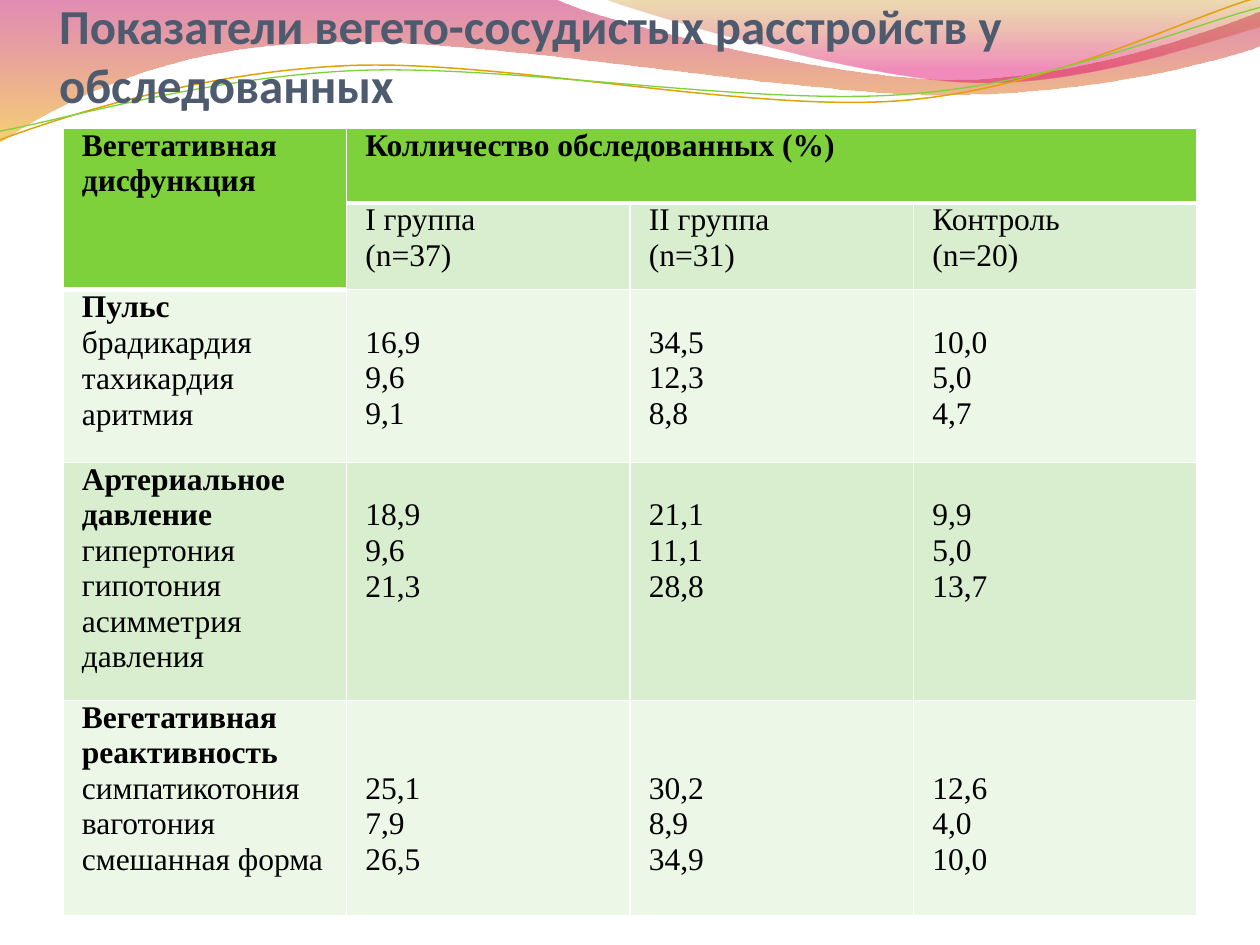
import math

import pptx
import pptx.dml.color
import pptx.enum.text
import pptx.oxml
import pptx.oxml.ns
import pptx.util

Inches = pptx.util.Inches
Pt = pptx.util.Pt
RGBColor = pptx.dml.color.RGBColor
qn = pptx.oxml.ns.qn

COLORS = {
    "title": "4E5B6F", "text": "000000", "border": "FFFFFF",
    "header": "7FD13B", "band": "D8EECE", "light": "ECF7E8",
    "crimson": "BD0059", "amber": "F0AB00", "ochre": "C38B00",
    "pink": "E1006B", "gold line": "E0A209", "green line": "7FD13B",
}
NAMESPACE = pptx.oxml.ns.nsdecls("a")

presentation = pptx.Presentation()
presentation.slide_width = Inches(10)
presentation.slide_height = Inches(7.5)
slide = presentation.slides.add_slide(presentation.slide_layouts[6])


def add_curve(segments, closed):
    """Draw an outline from points (x, y) and cubic segments of three points."""
    points = [(Inches(x), Inches(y)) for segment in segments
              for x, y in zip(segment[::2], segment[1::2])]
    builder = slide.shapes.build_freeform(*points[0], scale=1.0)
    builder.add_line_segments(points[1:], close=closed)
    shape = builder.convert_to_shape()
    shape.shadow.inherit = False
    straight_parts = iter(list(shape._element.iter(qn("a:lnTo"))))
    for segment in segments[1:]:
        first = next(straight_parts)
        if len(segment) == 6:
            first.tag = qn("a:cubicBezTo")
            for _ in range(2):
                control = next(straight_parts)
                first.append(control[0])
                control.getparent().remove(control)
    return shape


def write_paragraph(paragraph, text, formats):
    run = paragraph.add_run()
    run.text = text
    for name, value in formats.items():
        setattr(run.font, name, value)
    return run


# Waves: outline, then gradient stops as (position, colour, opacity in percent)
waves = [
    ([(0, 0), (4.4, -0.01), (4.76, 0.17, 6.64, 0.63, 7.58, 0.63),
      (8.53, 0.63, 9.58, 0.26, 10, 0.09), (10.01, 0.36),
      (9.83, 0.44, 8.7, 0.76, 7.46, 0.75), (6.22, 0.75, 3.82, 0.28, 2.57, 0.34),
      (1.29, 0.36, 0.46, 0.83, -0.01, 1.13), (0, 0)],
     [(0, "crimson", 45), (1, "amber", 55)]),
    ([(4.79, -0.01), (5.09, 0.11, 6.82, 0.62, 7.69, 0.65),
      (8.56, 0.69, 9.61, 0.32, 10, 0.21), (10, 0), (4.79, -0.01)],
     [(0, "ochre", 30), (0.8, "pink", 45)]),
]
for outline, stops in waves:
    shape = add_curve(outline, True)
    shape.line.fill.background()
    shape.fill.gradient()
    shape.fill.gradient_angle = 270
    for stop, (position, color, opacity) in zip(shape.fill.gradient_stops, stops):
        stop.position = position
        stop.color.rgb = RGBColor.from_string(COLORS[color])
        color_element = stop._gs.find(qn("a:srgbClr"))
        color_element.append(pptx.oxml.parse_xml(
            f'<a:alpha {NAMESPACE} val="{opacity * 1000}"/>'))

# Thin lines are laid out level about their centre, then tilted as shapes
tilt = 2.7
cosine, sine = math.cos(math.radians(tilt)), math.sin(math.radians(tilt))
wave_lines = [
    ([(0, 1.11), (0.48, 0.93, 1.58, 0.57, 2.77, 0.52),
      (3.95, 0.47, 5.93, 0.89, 7.13, 0.8), (8.33, 0.71, 9.38, 0.15, 9.98, -0.02)],
     (4.99, 0.58), "gold line", 0.85),
    ([(0, 1.04), (0.47, 0.96, 1.64, 0.61, 2.83, 0.56),
      (4.03, 0.51, 5.97, 0.84, 7.17, 0.75), (8.36, 0.67, 9.41, 0.21, 10, 0.06)],
     (5, 0.59), "green line", 0.75),
]
for outline, (center_x, center_y), color, width in wave_lines:
    level_outline = []
    for segment in outline:
        level_segment = []
        for x, y in zip(segment[::2], segment[1::2]):
            dx, dy = x - center_x, y - center_y
            level_segment += [center_x + dx * cosine - dy * sine,
                              center_y + dx * sine + dy * cosine]
        level_outline.append(level_segment)
    shape = add_curve(level_outline, False)
    shape.rotation = 360 - tilt
    shape.fill.background()
    shape.line.color.rgb = RGBColor.from_string(COLORS[color])
    shape.line.width = Pt(width)

# Title
title = slide.shapes.add_textbox(Inches(0.47), Inches(-0.16), Inches(9), Inches(1.8))
title_frame_formats = {
    "word_wrap": True, "vertical_anchor": pptx.enum.text.MSO_ANCHOR.BOTTOM,
    "margin_left": 0, "margin_right": 0, "margin_top": 0, "margin_bottom": Inches(0.74),
}
for name, value in title_frame_formats.items():
    setattr(title.text_frame, name, value)
title_run = write_paragraph(
    title.text_frame.paragraphs[0],
    "Показатели вегето-сосудистых расстройств у обследованных",
    {"name": "Calibri", "size": Pt(27.9), "bold": True})
title_run.font.color.rgb = RGBColor.from_string(COLORS["title"])

# Table: each cell is a list of lines
rows = [
    [["Вегетативная дисфункция"], ["Колличество обследованных (%)"], [], []],
    [[], ["І группа", "(n=37)"], ["ІІ группа", "(n=31)"], ["Контроль", "(n=20)"]],
    [["Пульс", "брадикардия", "тахикардия", "аритмия"],
     ["16,9", "9,6", "9,1"], ["34,5", "12,3", "8,8"], ["10,0", "5,0", "4,7"]],
    [["Артериальное давление", "гипертония", "гипотония", "асимметрия давления"],
     ["18,9", "9,6", "21,3"], ["21,1", "11,1", "28,8"], ["9,9", "5,0", "13,7"]],
    [["Вегетативная реактивность", "симпатикотония", "ваготония", "смешанная форма"],
     ["25,1", "7,9", "26,5"], ["30,2", "8,9", "34,9"], ["12,6", "4,0", "10,0"]],
]
row_heights = [0.59, 0.69, 1.37, 1.89, 1.71]
row_fills = ["header", "band", "light", "band", "light"]
lines_above_values = [0, 0, 1, 1, 2]
line_height = 0.28

table = slide.shapes.add_table(
    len(rows), 4, Inches(0.5), Inches(1.02), Inches(9), Inches(sum(row_heights))).table
table.first_row = False
table.horz_banding = False
for column in table.columns:
    column.width = Inches(2.25)
for row, height in zip(table.rows, row_heights):
    row.height = Inches(height)
table.cell(0, 0).merge(table.cell(1, 0))
table.cell(0, 1).merge(table.cell(0, 3))

for row_index, row in enumerate(rows):
    for column_index, lines in enumerate(row):
        cell = table.cell(row_index, column_index)
        is_label = column_index == 0
        is_header = row_index == 0 or (row_index == 1 and is_label)
        under_header = row_index == (2 if is_label else 1)
        above_body = row_index == (1 if is_label else 0)
        border_widths = {"L": 1, "R": 1, "T": 3 if under_header else 1,
                         "B": 3 if above_body else 1}
        for side, width in border_widths.items():
            cell._tc.get_or_add_tcPr().append(pptx.oxml.parse_xml(
                f'<a:ln{side} {NAMESPACE} w="{Pt(width)}"><a:solidFill>'
                f'<a:srgbClr val="{COLORS["border"]}"/></a:solidFill></a:ln{side}>'))
        cell.fill.solid()
        cell.fill.fore_color.rgb = RGBColor.from_string(
            COLORS["header" if is_header else row_fills[row_index]])
        blank_lines = 0 if is_label else lines_above_values[row_index]
        cell_formats = {
            "margin_left": Inches(0.15), "margin_right": Inches(0.07),
            "margin_top": Inches(blank_lines * line_height), "margin_bottom": 0,
        }
        for name, value in cell_formats.items():
            setattr(cell, name, value)
        for line_index, line in enumerate(lines):
            frame = cell.text_frame
            paragraph = frame.add_paragraph() if line_index else frame.paragraphs[0]
            paragraph_formats = {
                "alignment": pptx.enum.text.PP_ALIGN.JUSTIFY,
                "space_before": Pt(0.2), "space_after": Pt(0.3),
            }
            for name, value in paragraph_formats.items():
                setattr(paragraph, name, value)
            is_bold = is_header or (is_label and line_index == 0)
            run = write_paragraph(paragraph, line, {
                "name": "Times New Roman", "size": Pt(18), "bold": is_bold})
            run.font.color.rgb = RGBColor.from_string(COLORS["text"])

presentation.save("out.pptx")
